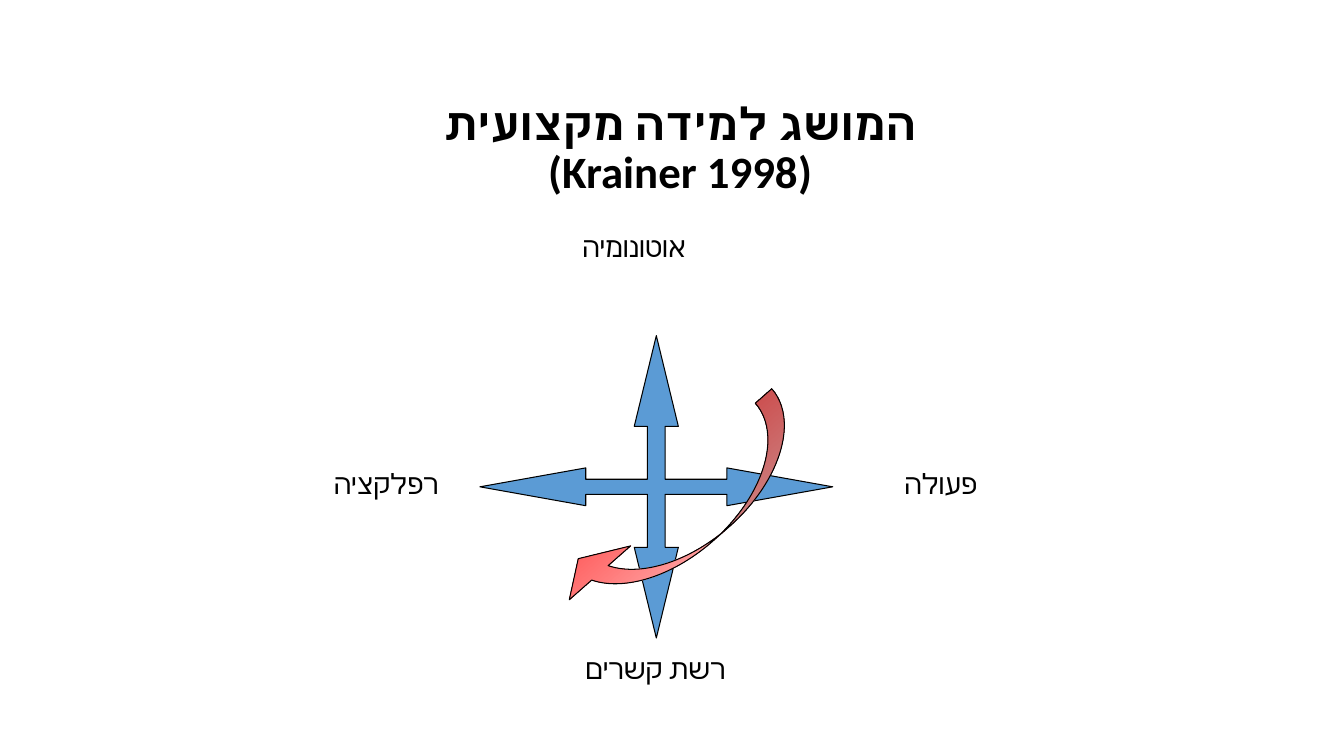
"""Build the slide on the concept of professional learning."""
from dataclasses import dataclass

from lxml import etree
from pptx import Presentation
from pptx import util as u
from pptx.dml.color import RGBColor
from pptx.enum import shapes, text
from pptx.oxml import ns

FONT = "Calibri"
BLACK = "000000"
ARROW_CENTRE = (6.51, 4.83)
ARROW_HALF_SIZE = (1.75, 1.5)
ARM = [(0.05, -0.4), (0.125, -0.4), (0, -1), (-0.125, -0.4), (-0.05, -0.4), (-0.05, -0.05)]


@dataclass
class Label:
    wording: str
    left: float
    top: float
    width: float = 2
    height: float = 0.44
    inset_top: float = 0.05
    inset_right: float = 0.1


LABELS = [
    Label("אוטונומיה", 5.59, 1.89, 1.86, 1.89, inset_top=0.39, inset_right=0.56),
    Label("רפלקציה", 2.83, 4.58, height=1.49),
    Label("פעולה", 8.33, 4.58),
    Label("רשת קשרים", 5.5, 6.41),
]


def colour(code: str) -> RGBColor:
    return RGBColor.from_string(code)


def place(shape, left: float, top: float, width: float, height: float) -> None:
    shape.left, shape.top = u.Inches(left), u.Inches(top)
    shape.width, shape.height = u.Inches(width), u.Inches(height)


def style_text(frame, size: float, bold: bool = False) -> None:
    frame.word_wrap = True
    frame.vertical_anchor = text.MSO_ANCHOR.TOP
    for para in frame.paragraphs:
        para.alignment = text.PP_ALIGN.CENTER
        para._p.get_or_add_pPr().set("rtl", "1")
        for span in para.runs:
            span.font.name, span.font.size, span.font.bold = FONT, u.Pt(size), bold
            span.font.color.rgb = colour(BLACK)
            script_font = etree.SubElement(span._r.get_or_add_rPr(), ns.qn("a:cs"))
            script_font.set("typeface", FONT)


def outline(shape) -> None:
    shape.shadow.inherit = False
    shape.line.color.rgb = colour(BLACK)
    shape.line.width = u.Pt(0.75)


def add_title(page) -> None:
    title = page.shapes.title
    place(title, 3.36, 0.96, 6.77, 1.38)
    frame = title.text_frame
    frame.text = "המושג למידה מקצועית\v(Krainer 1998)"
    frame.auto_size = text.MSO_AUTO_SIZE.NONE
    style_text(frame, 32, bold=True)
    frame.paragraphs[0].line_spacing = 0.9


def add_cross_arrow(page) -> None:
    points, arm = [], ARM
    for _ in range(4):
        points += arm
        arm = [(y, -x) for x, y in arm]
    corners = [
        tuple(u.Inches(c + p * h) for c, p, h in zip(ARROW_CENTRE, point, ARROW_HALF_SIZE))
        for point in points
    ]
    builder = page.shapes.build_freeform(*corners[0])
    builder.add_line_segments(corners[1:], close=True)
    arrow = builder.convert_to_shape()
    arrow.fill.solid()
    arrow.fill.fore_color.rgb = colour("5B9BD5")
    outline(arrow)


def add_label(page, label: Label) -> None:
    box = page.shapes.add_textbox(0, 0, 0, 0)
    place(box, label.left, label.top, label.width, label.height)
    frame = box.text_frame
    frame.text = label.wording
    frame.margin_top = u.Inches(label.inset_top)
    frame.margin_right = u.Inches(label.inset_right)
    style_text(frame, 20)


def add_curved_arrow(page) -> None:
    arrow = page.shapes.add_shape(shapes.MSO_SHAPE.CURVED_DOWN_ARROW, 0, 0, 0, 0)
    place(arrow, 5.31, 4.74, 2.96, 0.75)
    arrow.rotation = 138.7
    for index, value in enumerate((0.29, 1.08, 0.33)):
        arrow.adjustments[index] = value
    arrow.fill.gradient()
    arrow.fill.gradient_angle = 270
    for stop, code, position in zip(arrow.fill.gradient_stops, ("FFFFFF", "FF0000"), (0, 1)):
        stop.color.rgb = colour(code)
        stop.position = position
    outline(arrow)


def main() -> None:
    deck = Presentation()
    deck.slide_width, deck.slide_height = u.Inches(13.33), u.Inches(7.5)
    page = deck.slides.add_slide(deck.slide_layouts.get_by_name("Title Only"))
    add_title(page)
    add_cross_arrow(page)
    for label in LABELS:
        add_label(page, label)
    add_curved_arrow(page)
    deck.save("out.pptx")


if __name__ == "__main__":
    main()
